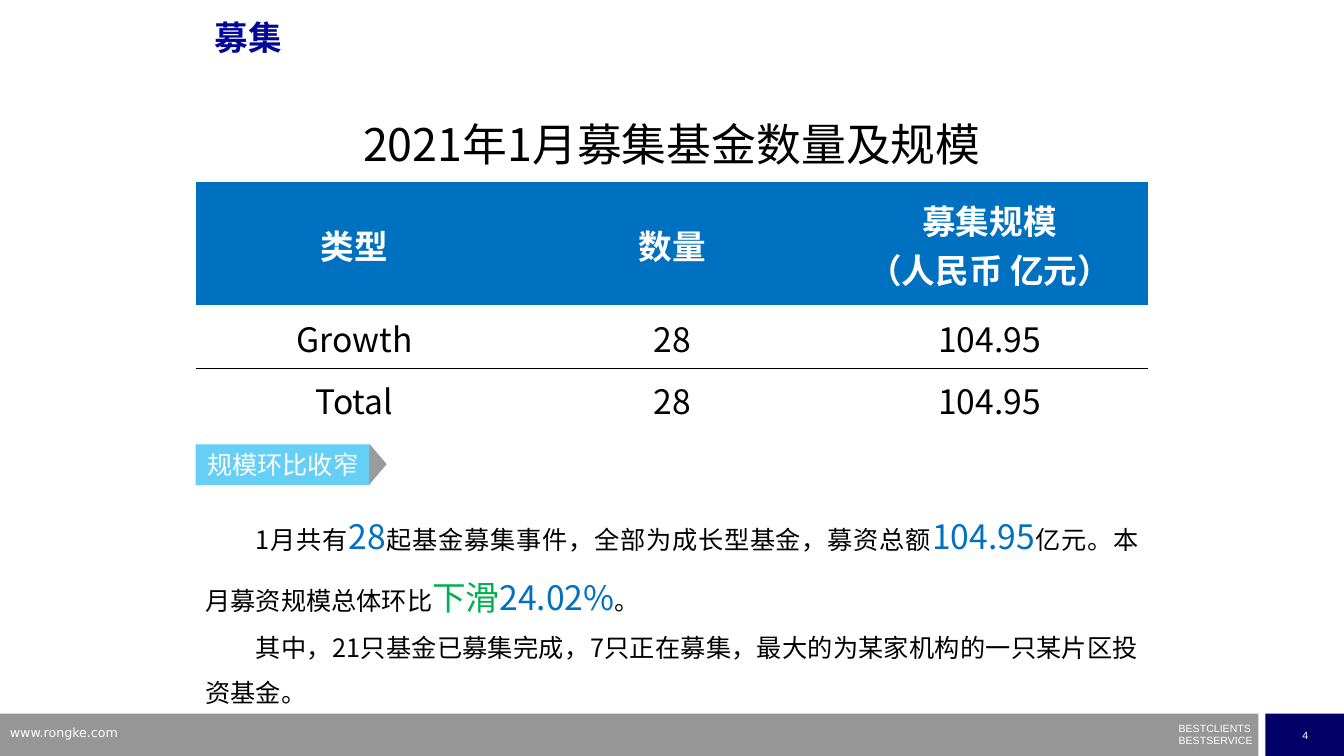
from dataclasses import dataclass

import pptx
import pptx.dml.color
import pptx.enum.shapes
import pptx.enum.text
import pptx.oxml.ns
import pptx.util
from lxml import etree

Inches = pptx.util.Inches
Pt = pptx.util.Pt
Align = pptx.enum.text.PP_ALIGN
Anchor = pptx.enum.text.MSO_ANCHOR
Shape = pptx.enum.shapes.MSO_SHAPE
qn = pptx.oxml.ns.qn

NO_STYLE = "{2D5ABB26-0587-4C30-8999-92F81FD0307C}"


@dataclass(frozen=True)
class Theme:
    white: str = "FFFFFF"
    black: str = "000000"
    title: str = "000798"
    blue: str = "0070C0"
    green: str = "00B050"
    tag: str = "00B0F0"
    tag_tip: str = "595959"
    footer: str = "969696"
    page_box: str = "000066"
    font: str = "Noto Sans CJK SC"
    title_font: str = "Arial"
    web_font: str = "DejaVu Sans"
    caption_size: float = 32
    large: float = 24
    body: float = 18
    web: float = 9
    small: float = 7.5


THEME = Theme()


def rgb(color):
    return pptx.dml.color.RGBColor.from_string(color)


def add_text(paragraph, text, size=THEME.body, color=THEME.black, font=THEME.font,
             bold=False, align=None, spacing=None, before=None):
    """Append text to the paragraph; a newline becomes a line break."""
    for index, line in enumerate(text.split("\n")):
        if index:
            paragraph.add_line_break()
        run = paragraph.add_run()
        run.text = line
        run.font.size = Pt(size)
        run.font.bold = bold
        run.font.name = font
        run.font.color.rgb = rgb(color)
        east_asian = etree.SubElement(run.font._element, qn("a:ea"))
        east_asian.set("typeface", THEME.font)
    if align is not None:
        paragraph.alignment = align
    if spacing is not None:
        paragraph.line_spacing = spacing
    if before is not None:
        paragraph.space_before = Pt(before)


def add_filled_shape(shapes, kind, left, top, width, height, color, opacity=100):
    shape = shapes.add_shape(kind, Inches(left), Inches(top), Inches(width), Inches(height))
    shape.shadow.inherit = False
    shape.fill.solid()
    shape.fill.fore_color.rgb = rgb(color)
    shape.line.fill.background()
    if opacity < 100:
        color_element = shape._element.spPr.find(qn("a:solidFill"))[0]
        etree.SubElement(color_element, qn("a:alpha")).set("val", str(opacity * 1000))
    return shape


def add_text_frame(slide, left, top, width, height):
    box = slide.shapes.add_textbox(Inches(left), Inches(top), Inches(width), Inches(height))
    box.text_frame.word_wrap = True
    return box.text_frame


def add_title(slide, text):
    title = slide.shapes.title
    title.left, title.top = Inches(2.03), Inches(0.16)
    title.width, title.height = Inches(9), Inches(0.7)
    frame = title.text_frame
    frame.auto_size = pptx.enum.text.MSO_AUTO_SIZE.NONE
    frame.vertical_anchor = Anchor.TOP
    add_text(frame.paragraphs[0], text, size=THEME.large, color=THEME.title,
             font=THEME.title_font, bold=True, align=Align.LEFT, spacing=0.9)


def add_footer(slide):
    add_filled_shape(slide.shapes, Shape.RECTANGLE, 0, 7.08, 12.48, 0.42, THEME.footer)
    page = add_filled_shape(slide.shapes, Shape.RECTANGLE, 12.55, 7.08, 0.79, 0.42,
                            THEME.page_box)
    page.text_frame.vertical_anchor = Anchor.MIDDLE
    small = dict(size=THEME.small, color=THEME.white, font=THEME.title_font)
    add_text(page.text_frame.paragraphs[0], "4", align=Align.CENTER, **small)

    motto = add_text_frame(slide, 11.69, 7.22, 0.76, 0.2)
    motto.margin_left = motto.margin_right = motto.margin_top = motto.margin_bottom = 0
    add_text(motto.paragraphs[0], "BESTCLIENTS", spacing=0.5, **small)
    add_text(motto.add_paragraph(), "BESTSERVICE", spacing=0.5, before=4, **small)

    website = add_text_frame(slide, 0, 7.14, 3.2, 0.26)
    add_text(website.paragraphs[0], "www.rongke.com", size=THEME.web, color=THEME.white,
             font=THEME.web_font)


def add_border(cell, side):
    line = etree.Element(qn("a:" + side), w=str(Pt(1)))
    fill = etree.SubElement(line, qn("a:solidFill"))
    etree.SubElement(fill, qn("a:srgbClr")).set("val", THEME.black)
    cell._tc.get_or_add_tcPr().insert(0, line)


def fill_cell(cell, text, background=None, **text_format):
    cell.margin_left = cell.margin_right = cell.margin_top = Inches(0.01)
    cell.margin_bottom = 0
    cell.vertical_anchor = Anchor.MIDDLE
    if background:
        cell.fill.solid()
        cell.fill.fore_color.rgb = rgb(background)
    else:
        cell.fill.background()
    add_text(cell.text_frame.paragraphs[0], text, align=Align.CENTER, **text_format)


def add_fund_table(slide, caption, header, rows):
    heights = [0.82, 1.22, 0.63, 0.61]
    frame = slide.shapes.add_table(len(rows) + 2, len(header), Inches(1.94), Inches(0.99),
                                   Inches(9.45), Inches(sum(heights)))
    table = frame.table
    table.first_row = table.horz_banding = False
    table._tbl.tblPr.find(qn("a:tableStyleId")).text = NO_STYLE
    for row, height in zip(table.rows, heights):
        row.height = Inches(height)

    table.cell(0, 0).merge(table.cell(0, len(header) - 1))
    fill_cell(table.cell(0, 0), caption, size=THEME.caption_size)
    for column, text in enumerate(header):
        fill_cell(table.cell(1, column), text, THEME.blue, size=THEME.large,
                  color=THEME.white, bold=True)
    for row_index, values in enumerate(rows, start=2):
        for column, text in enumerate(values):
            cell = table.cell(row_index, column)
            fill_cell(cell, text, size=THEME.large)
            add_border(cell, "lnB" if row_index == 2 else "lnT")


def add_tag(slide, text):
    group = slide.shapes.add_group_shape()
    label = add_filled_shape(group.shapes, Shape.RECTANGLE, 1.94, 4.41, 1.73, 0.4,
                             THEME.tag, opacity=60)
    label.text_frame.vertical_anchor = Anchor.MIDDLE
    add_text(label.text_frame.paragraphs[0], text, color=THEME.white, align=Align.CENTER)
    tip = add_filled_shape(group.shapes, Shape.ISOSCELES_TRIANGLE, 3.55, 4.52, 0.4, 0.17,
                           THEME.tag_tip, opacity=60)
    tip.rotation = 90


def add_commentary(slide, paragraphs):
    """Each paragraph is a list of (text, highlight colour or None)."""
    frame = add_text_frame(slide, 1.94, 4.87, 9.45, 2.17)
    for index, pieces in enumerate(paragraphs):
        paragraph = frame.add_paragraph() if index else frame.paragraphs[0]
        paragraph._p.get_or_add_pPr().set("indent", str(Inches(0.5)))
        for text, highlight in pieces:
            add_text(paragraph, text, size=THEME.large if highlight else THEME.body,
                     color=highlight or THEME.black, align=Align.JUSTIFY, spacing=1.5)


def main():
    presentation = pptx.Presentation()
    presentation.slide_width, presentation.slide_height = Inches(13.33), Inches(7.5)
    slide = presentation.slides.add_slide(presentation.slide_layouts[5])
    add_footer(slide)
    add_commentary(slide, [
        [("1月共有", None), ("28", THEME.blue),
         ("起基金募集事件，全部为成长型基金，募资总额", None), ("104.95", THEME.blue),
         ("亿元。本月募资规模总体环比", None), ("下滑", THEME.green),
         ("24.02%", THEME.blue), ("。", None)],
        [("其中，21只基金已募集完成，7只正在募集，最大的为某家机构的一只某片区投资基金。", None)],
    ])
    add_title(slide, "募集")
    add_tag(slide, "规模环比收窄")
    add_fund_table(slide, "2021年1月募集基金数量及规模",
                   ["类型", "数量", "募集规模\n（人民币 亿元）"],
                   [["Growth", "28", "104.95"], ["Total", "28", "104.95"]])
    presentation.save("out.pptx")


if __name__ == "__main__":
    main()
